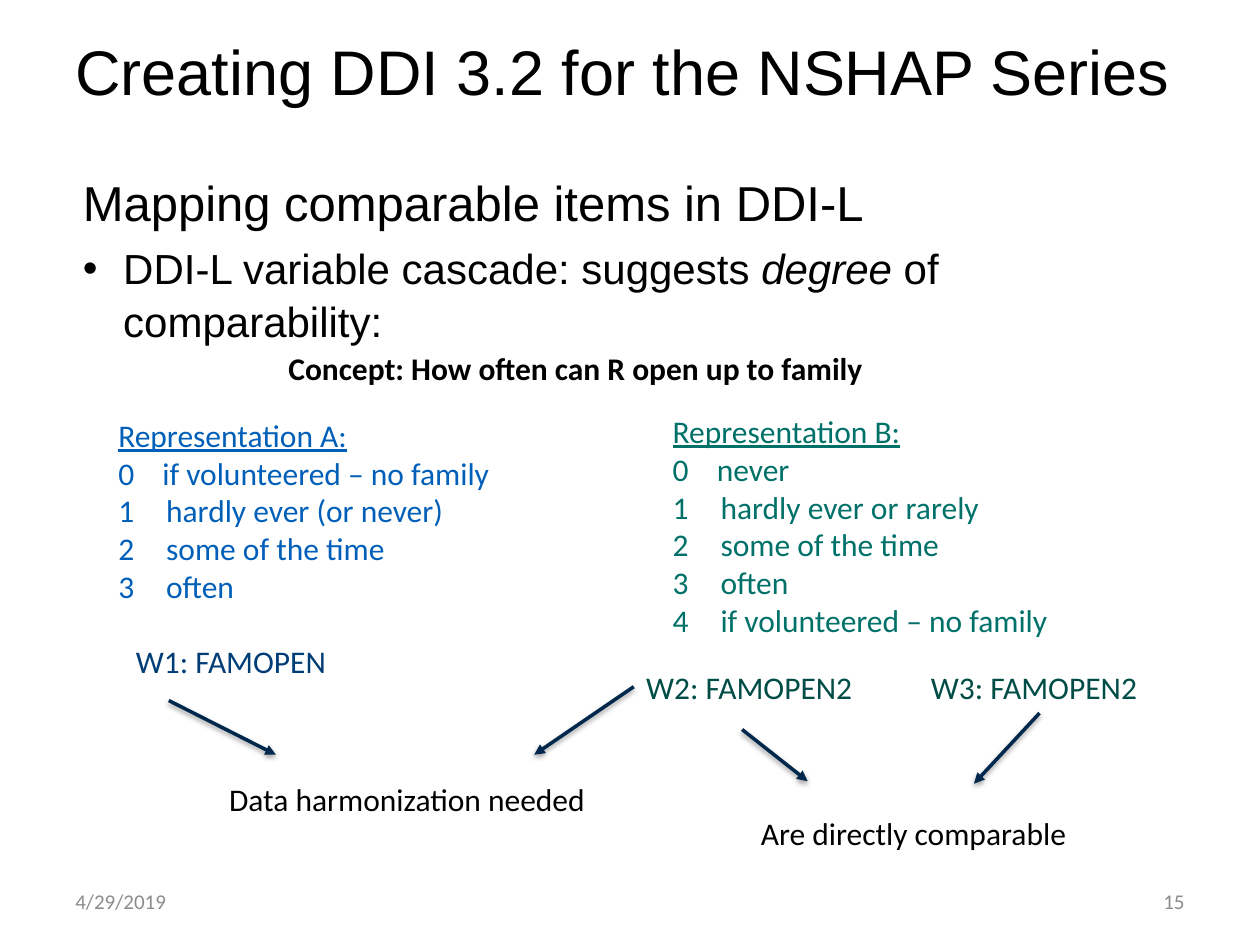
"""Build the slide on mapping comparable NSHAP items in DDI 3.2."""
from dataclasses import dataclass

from lxml.etree import SubElement
from pptx import Presentation
from pptx.dml.color import RGBColor
from pptx.enum.shapes import MSO_CONNECTOR
from pptx.enum.text import MSO_ANCHOR, PP_ALIGN
from pptx.oxml import parse_xml
from pptx.oxml.ns import nsdecls, qn
from pptx.util import Inches, Pt


@dataclass(frozen=True)
class Theme:
    heading_font: str = "Arial"
    text_font: str = "Calibri"
    title: int = 36
    lead: int = 28
    bullet: int = 24
    text: int = 18
    footer: int = 12
    black: str = "000000"
    gray: str = "8C8C8C"
    blue: str = "005FB8"
    dark_blue: str = "003D77"
    teal: str = "007169"
    dark_teal: str = "004C46"
    navy: str = "00274C"


theme = Theme()


def add_box(left, top, width, height, wrap=True, anchor=MSO_ANCHOR.TOP):
    box = page.shapes.add_textbox(Inches(left), Inches(top), Inches(width), Inches(height))
    box.text_frame.word_wrap = wrap
    box.text_frame.vertical_anchor = anchor
    return box.text_frame


def add_span(para, text, size, color, font=theme.text_font, **style):
    span = para.add_run()
    span.text = text
    span.font.name = font
    span.font.size = Pt(size)
    span.font.color.rgb = RGBColor.from_string(color)
    for name, value in style.items():
        setattr(span.font, name, value)


deck = Presentation()
deck.slide_width, deck.slide_height = Inches(10), Inches(7.5)
page = deck.slides.add_slide(deck.slide_layouts[6])

title = add_box(0.5, 0.17, 9, 0.77, anchor=MSO_ANCHOR.MIDDLE)
add_span(title.paragraphs[0], "Creating DDI 3.2 for the NSHAP Series",
         theme.title, theme.black, theme.heading_font)

body = add_box(0.56, 1.29, 9, 6.32)
lead = body.paragraphs[0]
lead.line_spacing = 1.06
add_span(lead, "Mapping comparable items in DDI-L", theme.lead, theme.black, theme.heading_font)
point = body.add_paragraph()
point.line_spacing = 1.06
point.space_before = Pt(4.8)
properties = point._p.get_or_add_pPr()
properties.set("marL", str(Inches(0.32)))
properties.set("indent", str(Inches(-0.32)))
SubElement(properties, qn("a:buFont"), typeface=theme.heading_font)
SubElement(properties, qn("a:buChar"), char="•")
for text, italic in [("DDI-L variable cascade: suggests ", False), ("degree", True),
                     (" of comparability:", False)]:
    add_span(point, text, theme.bullet, theme.black, theme.heading_font, italic=italic)

representations = [
    (0.84, 3.25, 3.19, 1.92, True, theme.blue, "Representation A:", "if volunteered – no family",
     ["hardly ever (or never)", "some of the time", "often"]),
    (5.24, 3.22, 3.21, 2.22, False, theme.teal, "Representation B:", "never",
     ["hardly ever or rarely", "some of the time", "often", "if volunteered – no family"]),
]
for left, top, width, height, wrap, color, heading, zero, answers in representations:
    frame = add_box(left, top, width, height, wrap)
    add_span(frame.paragraphs[0], heading, theme.text, color, underline=True)
    para = frame.add_paragraph()
    tabs = SubElement(para._p.get_or_add_pPr(), qn("a:tabLst"))
    SubElement(tabs, qn("a:tab"), pos=str(Inches(0.35)), algn="l")
    add_span(para, f"0\t{zero}", theme.text, color)
    for answer in answers:
        para = frame.add_paragraph()
        properties = para._p.get_or_add_pPr()
        properties.set("marL", str(Inches(0.38)))
        properties.set("indent", str(Inches(-0.38)))
        SubElement(properties, qn("a:buFont"), typeface=theme.text_font)
        SubElement(properties, qn("a:buAutoNum"), type="arabicPlain")
        add_span(para, answer, theme.text, color)

labels = [
    (2.19, 2.72, 4.81, False, "Concept: How often can R open up to family", theme.black, True),
    (0.98, 5.05, 1.92, True, "W1: FAMOPEN", theme.dark_blue, False),
    (5.03, 5.25, 1.85, False, "W2: FAMOPEN2", theme.dark_teal, False),
    (7.29, 5.25, 1.91, True, "W3: FAMOPEN2", theme.dark_teal, False),
    (1.72, 6.14, 3.06, False, "Data harmonization needed", theme.black, False),
    (5.94, 6.41, 2.65, False, "Are directly comparable", theme.black, False),
]
for left, top, width, wrap, text, color, bold in labels:
    label = add_box(left, top, width, 0.4, wrap)
    add_span(label.paragraphs[0], text, theme.text, color, bold=bold)

arrows = [(1.34, 5.56, 2.19, 5.99), (5.03, 5.45, 4.24, 5.99),
          (5.89, 5.79, 6.41, 6.2), (8.25, 5.66, 7.73, 6.22)]
for ends in arrows:
    arrow = page.shapes.add_connector(MSO_CONNECTOR.STRAIGHT, *map(Inches, ends))
    arrow.line.color.rgb = RGBColor.from_string(theme.navy)
    arrow.line.width = Pt(2)
    SubElement(arrow.line._get_or_add_ln(), qn("a:tailEnd"), type="triangle")
    arrow._element.spPr.append(parse_xml(
        f'<a:effectLst {nsdecls("a")}><a:outerShdw blurRad="{Pt(3.1)}" dist="{Pt(1.6)}" '
        f'dir="5400000" rotWithShape="0"><a:srgbClr val="{theme.black}">'
        '<a:alpha val="38000"/></a:srgbClr></a:outerShdw></a:effectLst>'))

for left, text, align in [(0.5, "4/29/2019", PP_ALIGN.LEFT), (7.17, "15", PP_ALIGN.RIGHT)]:
    footer = add_box(left, 6.95, 2.33, 0.4, anchor=MSO_ANCHOR.MIDDLE)
    footer.paragraphs[0].alignment = align
    add_span(footer.paragraphs[0], text, theme.footer, theme.gray)

deck.save("out.pptx")
